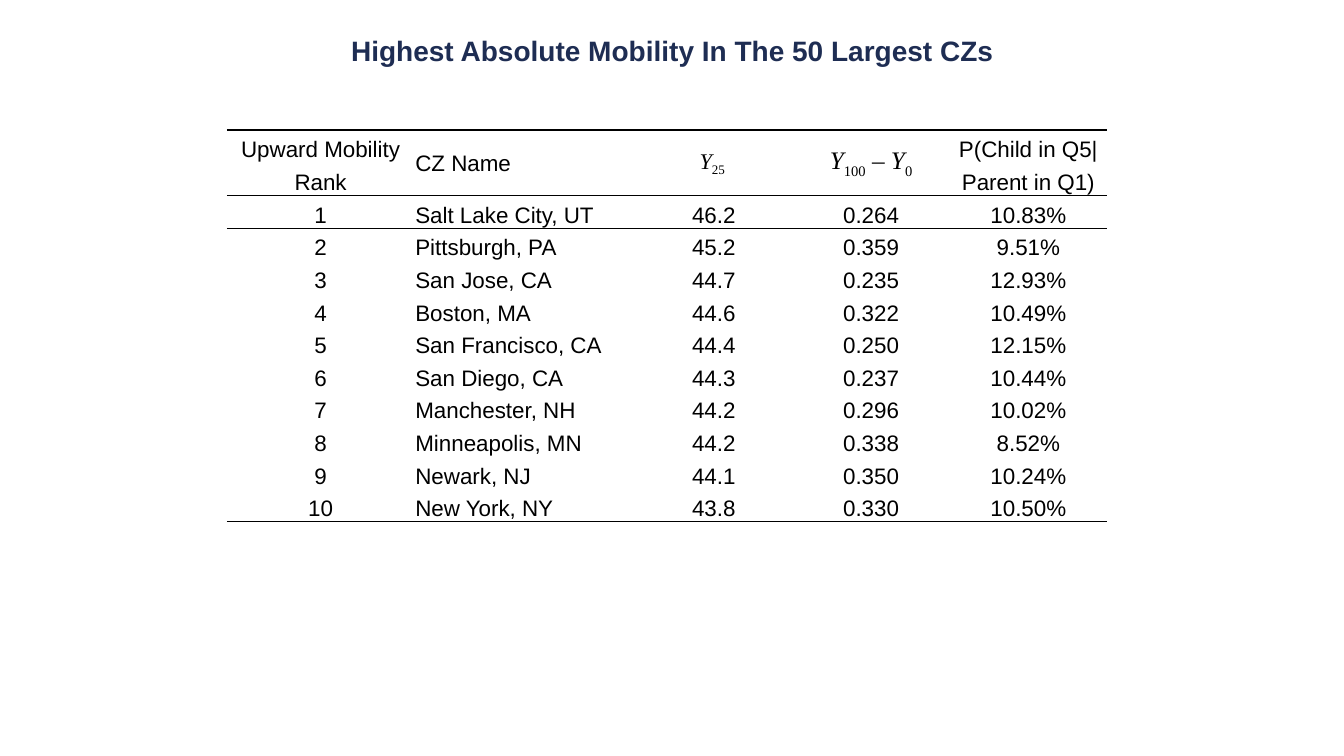
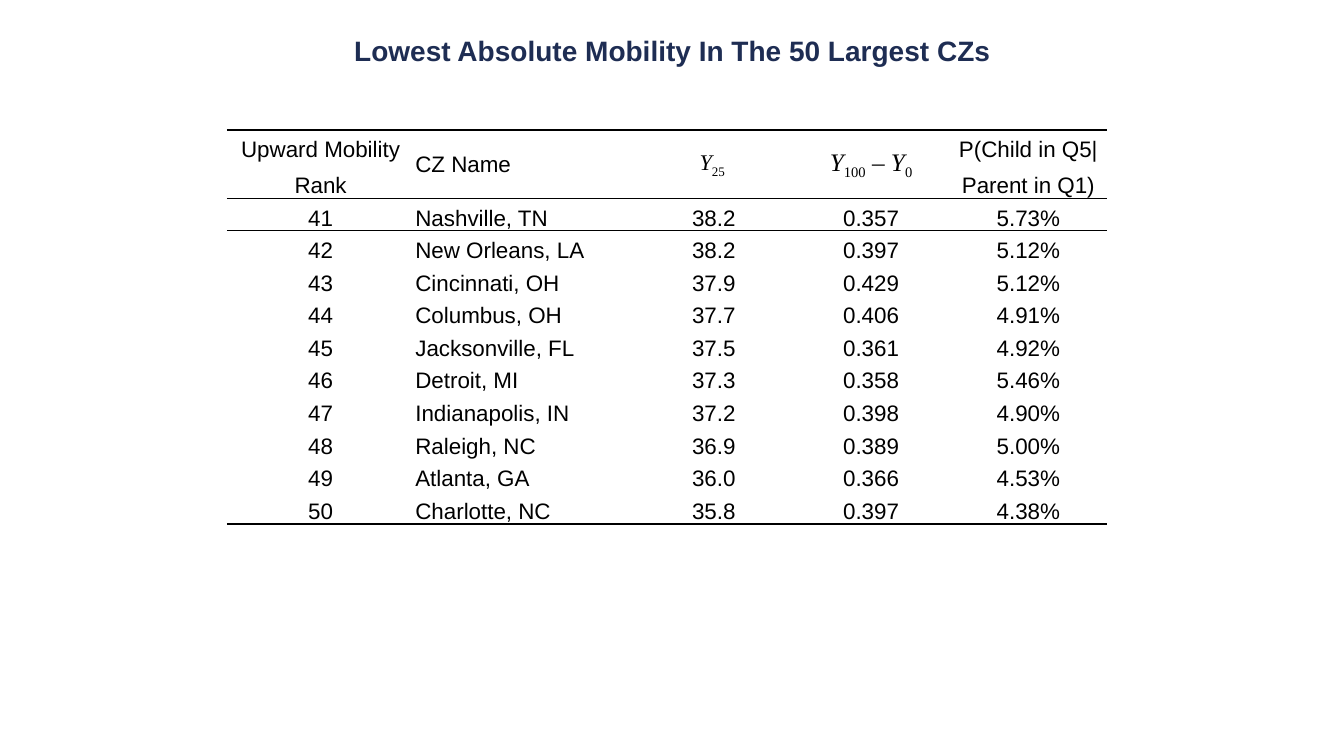
from dataclasses import dataclass

from lxml import etree
from pptx import Presentation
from pptx.dml.color import RGBColor
from pptx.enum.text import MSO_ANCHOR, PP_ALIGN
from pptx.oxml.ns import qn
from pptx.util import Inches, Pt

CENTER, LEFT = PP_ALIGN.CENTER, PP_ALIGN.LEFT
MIDDLE, BOTTOM = MSO_ANCHOR.MIDDLE, MSO_ANCHOR.BOTTOM
NO_GRID_STYLE = "{2D5ABB26-0587-4C30-8999-92F81FD0307C}"


@dataclass(frozen=True)
class Theme:
    """Colours, fonts and type sizes shared by the slides."""
    title: str = "1E2D53"
    text: str = "000000"
    paper: str = "FFFFFF"
    sans: str = "Arial"
    serif: str = "Times New Roman"
    title_pt: int = 20
    body_pt: int = 16
    formula_pt: int = 18
    rule_pt: int = 1


THEME = Theme()
COLUMN_WIDTHS = (1.86, 2.19, 1.56, 1.56, 1.56)
TABLE_LEFT, TABLE_TOP, TABLE_HEIGHT = 2.25, 1.29, 3.88
NAME_COLUMN = 1
HEADER_ROWS = 2
CELL_MARGINS = {
    "margin_left": Inches(0.01), "margin_right": Inches(0.01),
    "margin_top": Inches(0.01), "margin_bottom": 0,
}
TITLE_FORMAT = {"name": THEME.sans, "size": Pt(THEME.title_pt), "bold": True}
BODY_FORMAT = {"name": THEME.sans, "size": Pt(THEME.body_pt)}
SYMBOL_FORMAT = {"name": THEME.serif, "size": Pt(THEME.body_pt)}
FORMULA_FORMAT = {"name": THEME.serif, "size": Pt(THEME.formula_pt)}

SPLIT_HEADERS = {
    0: ("Upward Mobility", "Rank"),
    4: ("P(Child in Q5|", "Parent in Q1)"),
}
Y25 = (("Y", "italic"), ("25 ", "sub"))
Y_RANGE = (("Y", "italic"), ("100", "sub"), (" – ", ""),
           ("Y", "italic"), ("0", "sub"))
MERGED_HEADERS = {
    1: ((("CZ Name", ""),), BODY_FORMAT),
    2: (Y25, SYMBOL_FORMAT),
    3: (Y_RANGE, FORMULA_FORMAT),
}

HIGHEST = (
    ("1", "Salt Lake City, UT", "46.2", "0.264", "10.83%"),
    ("2", "Pittsburgh, PA", "45.2", "0.359", "9.51%"),
    ("3", "San Jose, CA", "44.7", "0.235", "12.93%"),
    ("4", "Boston, MA", "44.6", "0.322", "10.49%"),
    ("5", "San Francisco, CA", "44.4", "0.250", "12.15%"),
    ("6", "San Diego, CA", "44.3", "0.237", "10.44%"),
    ("7", "Manchester, NH", "44.2", "0.296", "10.02%"),
    ("8", "Minneapolis, MN", "44.2", "0.338", "8.52%"),
    ("9", "Newark, NJ", "44.1", "0.350", "10.24%"),
    ("10", "New York, NY", "43.8", "0.330", "10.50%"),
)
LOWEST = (
    ("41", "Nashville, TN", "38.2", "0.357", "5.73%"),
    ("42", "New Orleans, LA", "38.2", "0.397", "5.12%"),
    ("43", "Cincinnati, OH", "37.9", "0.429", "5.12%"),
    ("44", "Columbus, OH", "37.7", "0.406", "4.91%"),
    ("45", "Jacksonville, FL", "37.5", "0.361", "4.92%"),
    ("46", "Detroit, MI", "37.3", "0.358", "5.46%"),
    ("47", "Indianapolis, IN", "37.2", "0.398", "4.90%"),
    ("48", "Raleigh, NC", "36.9", "0.389", "5.00%"),
    ("49", "Atlanta, GA", "36.0", "0.366", "4.53%"),
    ("50", "Charlotte, NC", "35.8", "0.397", "4.38%"),
)
SLIDES = (
    ("Highest Absolute Mobility In The 50 Largest CZs", HIGHEST, 0),
    ("Lowest Absolute Mobility In The 50 Largest CZs", LOWEST, 0.03),
)


def set_attributes(obj, values):
    """Set every attribute named in a dict."""
    for name, value in values.items():
        setattr(obj, name, value)


def add_run(p, text, values, color=THEME.text, style=""):
    """Add a formatted run, optionally italic or subscript."""
    r = p.add_run()
    r.text = text
    set_attributes(r.font, values)
    r.font.color.rgb = RGBColor.from_string(color)
    if style == "italic":
        r.font.italic = True
    elif style == "sub":
        r._r.get_or_add_rPr().set("baseline", "-25000")


def add_title(s, text):
    """Add the centred slide title."""
    sp = s.shapes.add_textbox(Inches(3.46), Inches(0.33), Inches(6.42), Inches(0.34))
    tf = sp.text_frame
    set_attributes(tf, {"margin_left": 0, "margin_right": 0, "margin_top": 0,
                        "margin_bottom": 0, "word_wrap": False})
    p = tf.paragraphs[0]
    p.alignment = CENTER
    add_run(p, text, TITLE_FORMAT, THEME.title)


def add_rule(cell, tag):
    """Draw one border line on a cell."""
    ln = etree.SubElement(cell._tc.get_or_add_tcPr(), qn(tag),
                          w=str(Pt(THEME.rule_pt)))
    fill = etree.SubElement(ln, qn("a:solidFill"))
    etree.SubElement(fill, qn("a:srgbClr"), val=THEME.text)


def style_cell(cell, row, last_row):
    """Apply margins, horizontal rules and fill to a cell."""
    set_attributes(cell, CELL_MARGINS)
    cell.vertical_anchor = MIDDLE if cell.is_merge_origin else BOTTOM
    if row in (0, HEADER_ROWS):
        add_rule(cell, "a:lnT")
    if row in (HEADER_ROWS - 1, last_row) or cell.is_merge_origin:
        add_rule(cell, "a:lnB")
    cell.fill.solid()
    cell.fill.fore_color.rgb = RGBColor.from_string(THEME.paper)


def write_cell(table, row, column, parts, values=BODY_FORMAT):
    """Write styled text parts into a cell."""
    p = table.cell(row, column).text_frame.paragraphs[0]
    p.alignment = LEFT if column == NAME_COLUMN else CENTER
    for text, style in parts:
        add_run(p, text, values, style=style)


def add_mobility_table(s, records, header_extra):
    """Add the ranking table with its two-row header."""
    count = HEADER_ROWS + len(records)
    frame = s.shapes.add_table(
        count, len(COLUMN_WIDTHS), Inches(TABLE_LEFT), Inches(TABLE_TOP),
        Inches(sum(COLUMN_WIDTHS)), Inches(TABLE_HEIGHT))
    table = frame.table
    set_attributes(table, {"first_row": False, "horz_banding": False})
    table._tbl.tblPr.find(qn("a:tableStyleId")).text = NO_GRID_STYLE
    for column, width in zip(table.columns, COLUMN_WIDTHS):
        column.width = Inches(width)
    for row in table.rows:
        row.height = Inches(TABLE_HEIGHT / count)
    table.rows[HEADER_ROWS - 1].height += Inches(header_extra)
    for column, (parts, values) in MERGED_HEADERS.items():
        table.cell(0, column).merge(table.cell(HEADER_ROWS - 1, column))
        write_cell(table, 0, column, parts, values)
    for column, lines in SPLIT_HEADERS.items():
        for row, text in enumerate(lines):
            write_cell(table, row, column, ((text, ""),))
    for row, record in enumerate(records, HEADER_ROWS):
        for column, text in enumerate(record):
            write_cell(table, row, column, ((text, ""),))
    for row in range(count):
        for column in range(len(COLUMN_WIDTHS)):
            style_cell(table.cell(row, column), row, count - 1)


def main():
    """Build and save the presentation."""
    prs = Presentation()
    prs.slide_width, prs.slide_height = Inches(13.33), Inches(7.5)
    for title, records, header_extra in SLIDES:
        s = prs.slides.add_slide(prs.slide_layouts[6])
        add_mobility_table(s, records, header_extra)
        add_title(s, title)
    prs.save("out.pptx")


if __name__ == "__main__":
    main()
